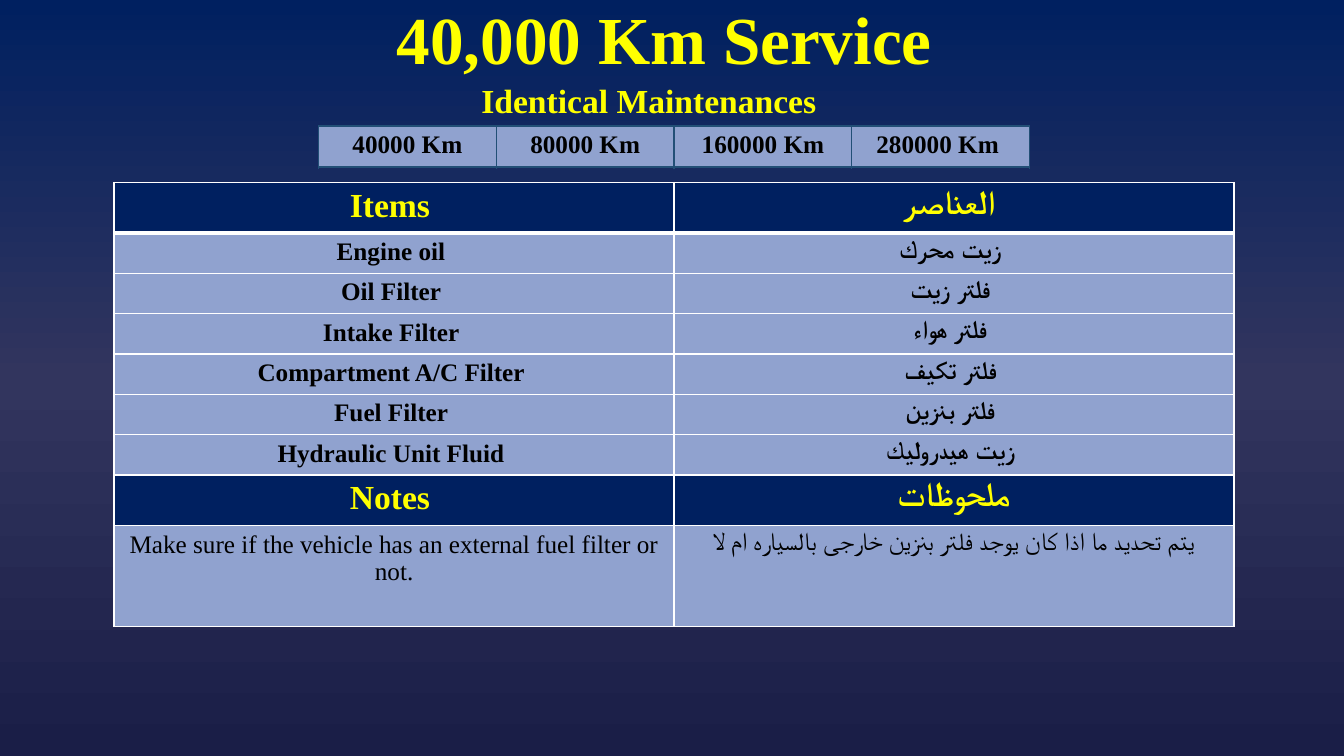
import copy
from dataclasses import dataclass

import pptx
import pptx.dml.color
import pptx.enum.text
import pptx.oxml
import pptx.oxml.ns
import pptx.util

Pt = pptx.util.Pt


@dataclass(frozen=True)
class Theme:
    font: str = "Times New Roman"
    navy: str = "002060"
    dusk: str = "32355E"
    night: str = "1A1E47"
    yellow: str = "FFFF00"
    periwinkle: str = "90A2CF"
    black: str = "000000"
    white: str = "FFFFFF"
    steel: str = "224F76"
    title_size: int = 48
    heading_size: int = 24
    body_size: int = 18


THEME = Theme()

INTERVALS = ["40000 Km", "80000 Km", "160000 Km", "280000 Km "]
ITEMS = [
    ("Engine oil ", "زيت محرك "),
    ("Oil Filter ", "فلتر زيت "),
    ("Intake Filter ", "فلتر هواء "),
    ("Compartment A/C Filter ", "فلتر تكيف "),
    ("Fuel Filter ", "فلتر بنزين "),
    ("Hydraulic Unit Fluid ", "زيت هيدروليك "),
]
NOTE = (
    "Make sure if the vehicle has an external fuel filter or not.",
    "يتم تحديد ما اذا كان يوجد فلتر بنزين خارجى بالسياره ام لا",
)


def color(value):
    return pptx.dml.color.RGBColor.from_string(value)


def write(frame, text, size=THEME.body_size, ink=THEME.black, bold=True, spacing=None):
    """Put one centred line of formatted text into a text frame."""
    para = frame.paragraphs[0]
    para.alignment = pptx.enum.text.PP_ALIGN.CENTER
    para.line_spacing = spacing
    span = para.add_run()
    span.text = text
    span.font.name = THEME.font
    span.font.size = Pt(size)
    span.font.bold = bold
    span.font.color.rgb = color(ink)


def paint_background(page, colors):
    """Fill the page with evenly spaced colours from top to bottom."""
    fill = page.background.fill
    fill.gradient()
    fill.gradient_angle = 270
    stops = page.element.find(".//" + pptx.oxml.ns.qn("a:gsLst"))
    stops.append(copy.deepcopy(stops[-1]))
    for index, (stop, value) in enumerate(zip(fill.gradient_stops, colors)):
        stop.color.rgb = color(value)
        stop.position = index / (len(colors) - 1)


def set_borders(cell, ink, widths):
    """Draw the left, right, top and bottom borders of a cell."""
    properties = cell._tc.get_or_add_tcPr()
    for side, width in zip("LRTB", widths):
        properties.append(pptx.oxml.parse_xml(
            f'<a:ln{side} {pptx.oxml.ns.nsdecls("a")} w="{Pt(width)}">'
            f'<a:solidFill><a:srgbClr val="{ink}"/></a:solidFill></a:ln{side}>'
        ))


def fill_cell(cell, text, fill, ink, widths, **text_format):
    set_borders(cell, ink, widths)
    cell.fill.solid()
    cell.fill.fore_color.rgb = color(fill)
    write(cell.text_frame, text, **text_format)


def add_grid(page, left, top, width, heights, columns):
    """Add a plain table with equal columns and the given row heights."""
    grid = page.shapes.add_table(
        len(heights), columns, Pt(left), Pt(top), Pt(width), Pt(sum(heights))
    ).table
    grid.horz_banding = False
    for column in grid.columns:
        column.width = Pt(width / columns)
    for row, height in zip(grid.rows, heights):
        row.height = Pt(height)
    return grid


def add_title(page, text):
    title = page.shapes.title
    title.left, title.top, title.width, title.height = Pt(60.5), Pt(7), Pt(828), Pt(47)
    title.text_frame.vertical_anchor = pptx.enum.text.MSO_ANCHOR.MIDDLE
    write(title.text_frame, text, size=THEME.title_size, ink=THEME.yellow, spacing=0.9)


def add_subtitle(page, text):
    box = page.shapes.add_textbox(Pt(267), Pt(53.5), Pt(393), Pt(36))
    box.text_frame.word_wrap = True
    write(box.text_frame, text, size=THEME.heading_size, ink=THEME.yellow)


def add_intervals(page):
    grid = add_grid(page, 227.5, 90, 508, [29.5], len(INTERVALS))
    for cell, text in zip(grid.iter_cells(), INTERVALS):
        fill_cell(cell, text, THEME.periwinkle, THEME.steel, (1, 1, 1, 2))


def add_service_table(page):
    heading = dict(size=THEME.heading_size, ink=THEME.yellow)
    rows = [
        (("Items ", "العناصر "), 36, heading),
        *((item, 28.8, {}) for item in ITEMS),
        (("Notes ", "ملحوظات"), 36, heading),
        (NOTE, 72, dict(bold=False)),
    ]
    grid = add_grid(page, 81.5, 130.3, 800, [height for _, height, _ in rows], 2)
    for index, (texts, _, text_format) in enumerate(rows):
        fill = THEME.navy if text_format is heading else THEME.periwinkle
        widths = (1, 1, 3 if index == 1 else 1, 3 if index == 0 else 1)
        for cell, text in zip(grid.rows[index].cells, texts):
            fill_cell_format = dict(text_format)
            ink = fill_cell_format.pop("ink", THEME.black)
            set_borders(cell, THEME.white, widths)
            cell.fill.solid()
            cell.fill.fore_color.rgb = color(fill)
            write(cell.text_frame, text, ink=ink, **fill_cell_format)


def main():
    deck = pptx.Presentation()
    deck.slide_width, deck.slide_height = Pt(960), Pt(540)
    page = deck.slides.add_slide(deck.slide_layouts[5])
    paint_background(page, (THEME.navy, THEME.dusk, THEME.night))
    add_title(page, "40,000 Km Service")
    add_intervals(page)
    add_subtitle(page, "Identical Maintenances")
    add_service_table(page)
    deck.save("out.pptx")


if __name__ == "__main__":
    main()
